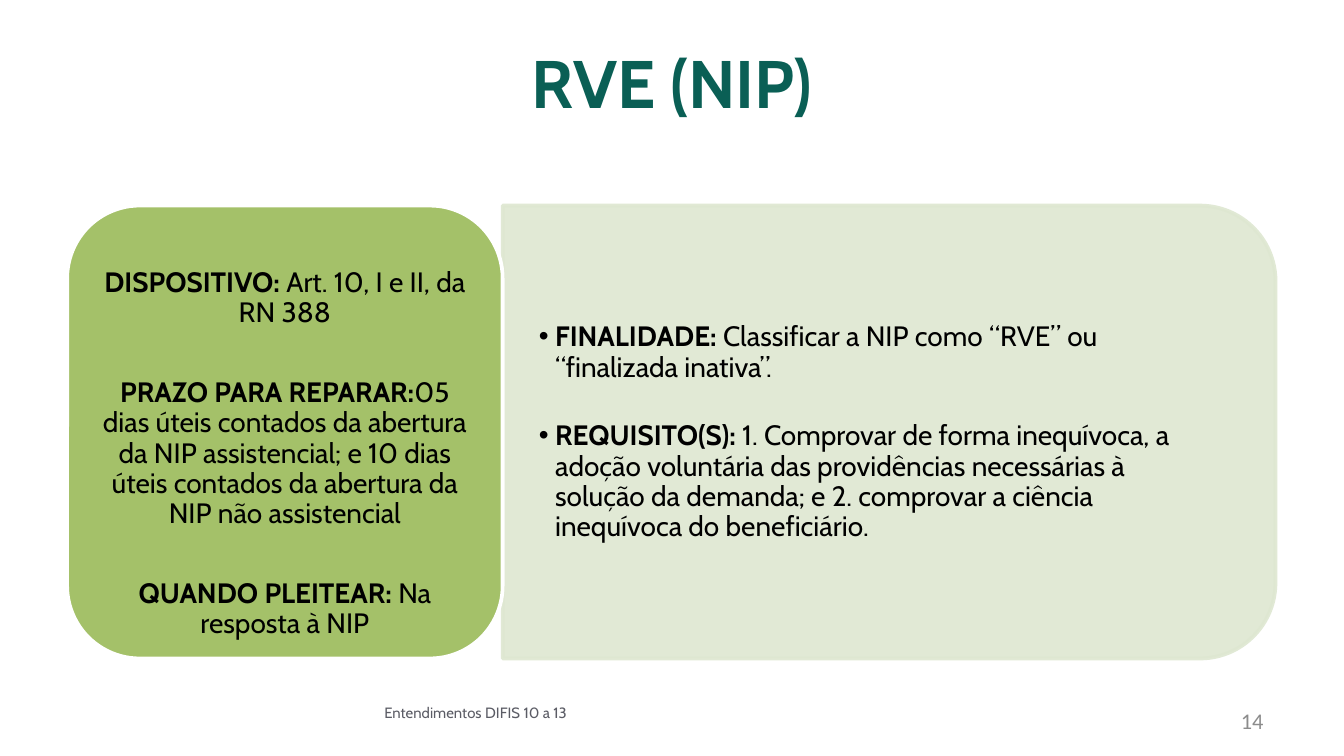
from dataclasses import dataclass

from lxml import etree
from pptx import Presentation
from pptx.dml.color import RGBColor
from pptx.enum import shapes, text
from pptx.oxml.ns import qn
from pptx.util import Inches, Pt


@dataclass(frozen=True)
class Theme:
    font: str = "Cabin"
    number_font: str = "Calibri"
    title: str = "0A5F55"
    body: str = "000000"
    footer: str = "5B5C65"
    number: str = "8C8C8C"
    green: str = "9BBB59"
    pale: str = "DEE7D1"
    white: str = "FFFFFF"
    title_size: float = 36
    body_size: float = 15
    number_size: float = 12
    footer_size: float = 8


@dataclass(frozen=True)
class Box:
    left: float
    top: float
    width: float
    height: float

    def lengths(self) -> list:
        return [Inches(n) for n in (self.left, self.top, self.width, self.height)]


@dataclass(frozen=True)
class Item:
    label: str
    detail: str


THEME = Theme()
CENTER = text.PP_ALIGN.CENTER
MIDDLE = text.MSO_ANCHOR.MIDDLE

CARD_ITEMS = [
    Item("DISPOSITIVO: ", "Art. 10, I e II, da RN 388"),
    Item("PRAZO PARA REPARAR:", "05 dias úteis contados da abertura da NIP "
         "assistencial; e 10 dias úteis contados da abertura da NIP não assistencial"),
    Item("QUANDO PLEITEAR: ", "Na resposta à NIP"),
]
LIST_ITEMS = [
    Item("FINALIDADE: ", "Classificar a NIP como “RVE” ou “finalizada inativa”."),
    Item("REQUISITO(S): ", "1. Comprovar de forma inequívoca, a adoção voluntária das "
         "providências necessárias à solução da demanda; e 2. comprovar a ciência "
         "inequívoca do beneficiário."),
]


def place(shape, box: Box) -> None:
    shape.left, shape.top, shape.width, shape.height = box.lengths()


def set_font(font, name: str, size: float, color: str) -> None:
    font.name = name
    font.size = Pt(size)
    font.color.rgb = RGBColor.from_string(color)


def set_frame(frame, anchor, insets: tuple) -> None:
    frame.word_wrap = True
    frame.auto_size = text.MSO_AUTO_SIZE.NONE
    frame.vertical_anchor = anchor
    (frame.margin_left, frame.margin_top,
     frame.margin_right, frame.margin_bottom) = [Inches(n) for n in insets]


def set_opacity(fill_element, percent: int) -> None:
    color = fill_element.find(".//" + qn("a:srgbClr"))
    etree.SubElement(color, qn("a:alpha"), val=str(percent * 1000))


def add_panel(slide, kind, box: Box, fill: str, line: str):
    panel = slide.shapes.add_shape(kind, *box.lengths())
    panel.shadow.inherit = False
    panel.fill.solid()
    panel.fill.fore_color.rgb = RGBColor.from_string(fill)
    panel.line.color.rgb = RGBColor.from_string(line)
    panel.line.width = Pt(2)
    set_opacity(panel._element.spPr.find(qn("a:solidFill")), 90)
    return panel


def add_bullet(paragraph) -> None:
    indent = Inches(0.12)
    properties = paragraph._p.get_or_add_pPr()
    properties.set("marL", str(indent))
    properties.set("indent", str(-indent))
    etree.SubElement(properties, qn("a:buChar"), char="•")


def write_items(frame, items: list[Item], gap: float, align, bulleted: bool) -> None:
    for index, item in enumerate(items):
        paragraph = frame.add_paragraph() if index else frame.paragraphs[0]
        if bulleted:
            add_bullet(paragraph)
        paragraph.alignment = align
        paragraph.line_spacing = 0.9
        paragraph.space_before = Pt(gap if index else 0)
        set_font(paragraph.font, THEME.font, THEME.body_size, THEME.body)
        for words, bold in ((item.label, True), (item.detail, False)):
            run = paragraph.add_run()
            run.text = words
            set_font(run.font, THEME.font, THEME.body_size, THEME.body)
            run.font.bold = bold


def write_line(shape, words: str, align, name: str, size: float, color: str) -> None:
    set_frame(shape.text_frame, MIDDLE, (0.1, 0.05, 0.1, 0.05))
    paragraph = shape.text_frame.paragraphs[0]
    paragraph.alignment = align
    run = paragraph.add_run()
    run.text = words
    set_font(run.font, name, size, color)


def main() -> None:
    presentation = Presentation()
    presentation.slide_width = Inches(10)
    presentation.slide_height = Inches(10 * 9 / 16)
    slide = presentation.slides.add_slide(presentation.slide_layouts[1])

    title = slide.shapes.title
    place(title, Box(0.5, 0.14, 9, 0.94))
    write_line(title, "RVE (NIP)", CENTER, THEME.font, THEME.title_size, THEME.title)
    title.text_frame.paragraphs[0].runs[0].font.bold = True

    body = slide.placeholders[1]
    panel = add_panel(slide, shapes.MSO_SHAPE.ROUND_2_SAME_RECTANGLE,
                      Box(4.93, 0.34, 3.37, 5.75), THEME.pale, THEME.pale)
    panel.rotation = 90
    set_opacity(panel.line._ln, 90)
    body._element.addprevious(panel._element)

    place(body, Box(3.74, 1.7, 5.59, 3.04))
    set_frame(body.text_frame, MIDDLE, (0.27, 0.14, 0.27, 0.14))
    write_items(body.text_frame, LIST_ITEMS, 20.7, text.PP_ALIGN.LEFT, True)

    card = add_panel(slide, shapes.MSO_SHAPE.ROUNDED_RECTANGLE,
                     Box(0.5, 1.53, 3.24, 3.37), THEME.green, THEME.white)
    set_frame(card.text_frame, text.MSO_ANCHOR.TOP, (0.06, 0.31, 0.06, 0))
    write_items(card.text_frame, CARD_ITEMS, 26.5, CENTER, False)

    footer = slide.shapes.add_textbox(*Box(0.5, 5.15, 6.08, 0.3).lengths())
    write_line(footer, "Entendimentos DIFIS 10 a 13", CENTER,
               THEME.font, THEME.footer_size, THEME.footer)
    number = slide.shapes.add_textbox(*Box(7.17, 5.21, 2.33, 0.3).lengths())
    write_line(number, "14", text.PP_ALIGN.RIGHT,
               THEME.number_font, THEME.number_size, THEME.number)

    presentation.save("out.pptx")


if __name__ == "__main__":
    main()
